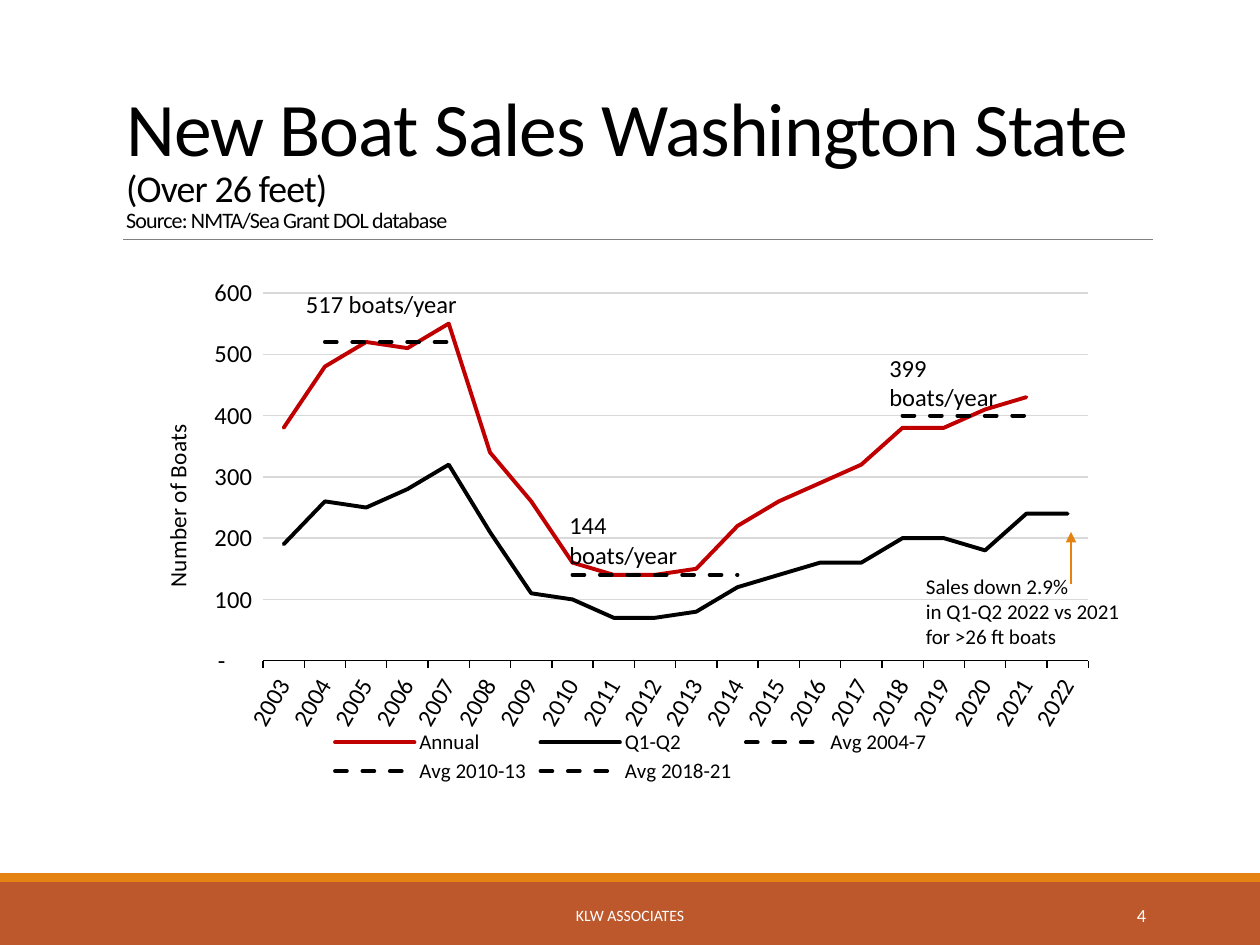
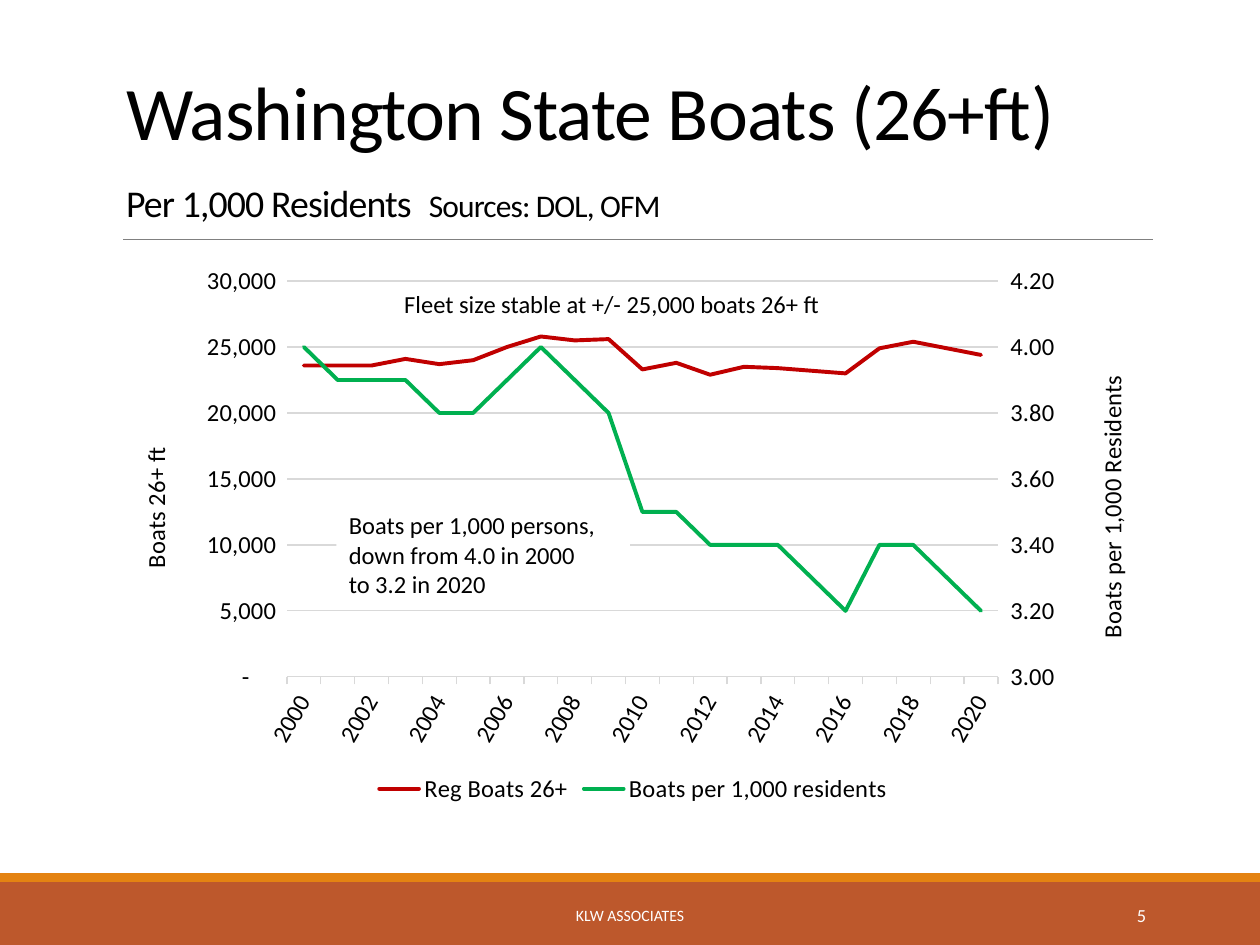
from copy import deepcopy

from lxml import etree
from pptx import Presentation
from pptx.chart.axis import ValueAxis
from pptx.chart.data import CategoryChartData
from pptx.dml.color import RGBColor
from pptx.enum.chart import XL_CHART_TYPE, XL_LEGEND_POSITION, XL_TICK_MARK
from pptx.enum.dml import MSO_LINE
from pptx.enum.shapes import MSO_CONNECTOR, MSO_SHAPE
from pptx.enum.text import MSO_ANCHOR, PP_ALIGN
from pptx.oxml.ns import qn
from pptx.util import Pt

BLACK = RGBColor(0x00, 0x00, 0x00)
WHITE = RGBColor(0xFF, 0xFF, 0xFF)
RUST = RGBColor(0xBD, 0x58, 0x2C)
ORANGE = RGBColor(0xE4, 0x83, 0x12)
GRAY = RGBColor(0x80, 0x80, 0x80)
GRID = RGBColor(0xD9, 0xD9, 0xD9)
RED = RGBColor(0xC0, 0x00, 0x00)
GREEN = RGBColor(0x00, 0xB0, 0x50)
FONT = "Calibri"
TOP, MIDDLE, BOTTOM = MSO_ANCHOR.TOP, MSO_ANCHOR.MIDDLE, MSO_ANCHOR.BOTTOM
LEFT, CENTER, RIGHT = PP_ALIGN.LEFT, PP_ALIGN.CENTER, PP_ALIGN.RIGHT
RECTANGLE, STRAIGHT = MSO_SHAPE.RECTANGLE, MSO_CONNECTOR.STRAIGHT
LINE_CHART, LEGEND_BOTTOM = XL_CHART_TYPE.LINE, XL_LEGEND_POSITION.BOTTOM
NO_TICK, TICK_OUT = XL_TICK_MARK.NONE, XL_TICK_MARK.OUTSIDE
DASH = MSO_LINE.DASH
COUNT_FORMAT = '_(* #,##0_);_(* \\(#,##0\\);_(* "-"??_);_('
BREAK = "\n"


def add_text(page, place, lines, color=BLACK, anchor=TOP, align=LEFT, fill=None):
    """Add a text box; each line is a list of (text, size) spans."""
    box = page.shapes.add_textbox(*map(Pt, place))
    if fill is not None:
        box.fill.solid()
        box.fill.fore_color.rgb = fill
    frame = box.text_frame
    frame.word_wrap = True
    frame.vertical_anchor = anchor
    for number, line in enumerate(lines):
        para = frame.add_paragraph() if number else frame.paragraphs[0]
        para.alignment = align
        for text, size in line:
            if text == BREAK:
                para.add_line_break()
                continue
            span = para.add_run()
            span.text = text
            for name, value in {"name": FONT, "size": Pt(size)}.items():
                setattr(span.font, name, value)
            span.font.color.rgb = color
    return box


def set_layout(parent, index, inner=False, **fractions):
    """Place a chart part by fractions of the chart's size."""
    for old in parent.findall(qn("c:layout")):
        parent.remove(old)
    layout = etree.Element(qn("c:layout"))
    manual = etree.SubElement(layout, qn("c:manualLayout"))
    if inner:
        etree.SubElement(manual, qn("c:layoutTarget")).set("val", "inner")
    for side in "xy":
        etree.SubElement(manual, qn(f"c:{side}Mode")).set("val", "edge")
    for side, value in fractions.items():
        etree.SubElement(manual, qn(f"c:{side}")).set("val", str(value))
    parent.insert(index, layout)


# Content of the two slides
GAP = [None]
sales = {
    "number": "4",
    "title": [("New Boat Sales Washington State ", 43.2), ("(Over 26 feet)", 21.6),
              (BREAK, 0), ("Source: NMTA/Sea Grant DOL database", 12.6)],
    "place": (89.7, 158.4, 541.44, 291.6),
    "plot": {"x": 0.112, "y": 0.031, "w": 0.871, "h": 0.721},
    "years": range(2003, 2023),
    "label_step": 1,
    "axis_line": BLACK,
    "axis_title_size": 13.3,
    "legend_size": 12,
    "legend_layout": {"x": 0.18, "y": 0.88, "w": 0.64, "h": 0.12},
    "series": [
        ("Annual", [380, 480, 520, 510, 550, 340, 260, 160, 140, 140, 150, 220, 260,
                    290, 320, 380, 380, 410, 430, None], RED, None),
        ("Q1-Q2", [190, 260, 250, 280, 320, 210, 110, 100, 70, 70, 80, 120, 140,
                   160, 160, 200, 200, 180, 240, 240], BLACK, None),
        ("Avg 2004-7", GAP + [520] * 4 + GAP * 15, BLACK, DASH),
        ("Avg 2010-13", GAP * 7 + [140] * 5 + GAP * 8, BLACK, DASH),
        ("Avg 2018-21", GAP * 15 + [400] * 4 + GAP, BLACK, DASH),
    ],
    # title, minimum, maximum, step, number format, tick, title x, title y
    "axes": [("Number of Boats", 0, 600, 100, COUNT_FORMAT, NO_TICK, 0, 0.28)],
    # place, lines, size, fill
    "notes": [
        ((167.76, 161.7, 105.12, 24.5), ["517 boats/year"], 14, None),
        ((318.24, 288, 98.64, 24.5), ["144 boats/year"], 14, None),
        ((501.12, 198, 98.64, 24.5), ["399 boats/year"], 14, None),
        ((522, 324, 131.04, 51), ["Sales down 2.9%", "in Q1-Q2 2022 vs 2021",
                                  "for >26 ft boats"], 12, None),
    ],
    "arrow": (612, 334, 612, 304),
}
fleet = {
    "number": "5",
    "title": [("Washington State Boats (26+ft) ", 43.2), (BREAK, 0),
              ("Per 1,000 Residents", 21.6), (" ", 43.2), ("Sources: DOL, OFM", 18)],
    "place": (64.8, 145.44, 594, 316.8),
    "plot": {"x": 0.167, "y": 0.048, "w": 0.684, "h": 0.714},
    "years": range(2000, 2021),
    "label_step": 2,
    "axis_line": GRID,
    "axis_title_size": 14,
    "legend_size": 14,
    "legend_layout": None,
    "series": [
        ("Reg Boats 26+", [23600, 23600, 23600, 24100, 23700, 24000, 25000, 25800, 25500,
                           25600, 23300, 23800, 22900, 23500, 23400, 23200, 23000, 24900,
                           25400, 24900, 24400], RED, None),
        ("Boats per 1,000 residents", [4, 3.9, 3.9, 3.9, 3.8, 3.8, 3.9, 4, 3.9, 3.8, 3.5,
                                       3.5, 3.4, 3.4, 3.4, 3.3, 3.2, 3.4, 3.4, 3.3, 3.2],
         GREEN, None),
    ],
    "axes": [("Boats 26+ ft", 0, 30000, 5000, COUNT_FORMAT, NO_TICK, 0.02, 0.34),
             ("Boats per 1,000 Residents", 3, 4.2, 0.2, "0.00", TICK_OUT, 0.94, 0.21)],
    "notes": [
        ((223.92, 161.7, 256.32, 24.5), ["Fleet size stable at +/- 25,000 boats 26+ ft"],
         14, WHITE),
        ((192.24, 288, 167.76, 58.3), ["Boats per 1,000 persons,", "down from 4.0 in 2000",
                                       "to 3.2 in 2020"], 14, WHITE),
    ],
    "arrow": None,
}

deck = Presentation()
deck.slide_width, deck.slide_height = Pt(720), Pt(540)

for content in (sales, fleet):
    page = deck.slides.add_slide(deck.slide_layouts[6])

    # Bottom bands
    for top, height, color in ((504, 36, RUST), (499, 5, ORANGE)):
        band = page.shapes.add_shape(RECTANGLE, 0, Pt(top), Pt(720), Pt(height))
        band.shadow.inherit = False
        band.fill.solid()
        band.fill.fore_color.rgb = color
        band.line.fill.background()

    # Title
    title = add_text(page, (65, 22.32, 594, 114.48), [content["title"]], anchor=BOTTOM)
    title.text_frame.paragraphs[0].line_spacing = 0.85
    for properties in title.element.iter(qn("a:rPr")):
        properties.set("spc", "-50")

    # Chart
    data = CategoryChartData()
    data.categories = [str(year) for year in content["years"]]
    for name, values, color, dash in content["series"]:
        data.add_series(name, values)
    chart = page.shapes.add_chart(LINE_CHART, *map(Pt, content["place"]), data).chart
    chart.has_title = False
    chart.font.name, chart.font.size = FONT, Pt(14)
    chart.font.color.rgb = BLACK
    for series, (name, values, color, dash) in zip(chart.plots[0].series, content["series"]):
        series.smooth = False
        series.format.line.width = Pt(2.25)
        series.format.line.color.rgb = color
        if dash:
            series.format.line.dash_style = dash
    plot_area = chart.element.find(".//" + qn("c:plotArea"))
    for outline in plot_area.iter(qn("a:ln")):
        outline.set("cap", "rnd")

    # Second value axis
    year_xml = plot_area.find(qn("c:catAx"))
    left_xml = plot_area.find(qn("c:valAx"))
    value_axes = [ValueAxis(left_xml)]
    if len(content["axes"]) > 1:
        left_lines = plot_area.find(qn("c:lineChart"))
        right_lines = deepcopy(left_lines)
        left_lines.remove(left_lines.findall(qn("c:ser"))[1])
        right_lines.remove(right_lines.findall(qn("c:ser"))[0])
        left_lines.addnext(right_lines)
        hidden_xml, right_xml = deepcopy(year_xml), deepcopy(left_xml)
        left_xml.addnext(hidden_xml)
        hidden_xml.addnext(right_xml)
        for axis_id, number in zip(right_lines.findall(qn("c:axId")), ("5001", "5002")):
            axis_id.set("val", number)
        for axis_xml, own, other in ((hidden_xml, "5001", "5002"), (right_xml, "5002", "5001")):
            axis_xml.find(qn("c:axId")).set("val", own)
            axis_xml.find(qn("c:crossAx")).set("val", other)
        hidden_xml.find(qn("c:delete")).set("val", "1")
        right_xml.find(qn("c:axPos")).set("val", "r")
        right_xml.find(qn("c:crosses")).set("val", "max")
        value_axes.append(ValueAxis(right_xml))

    # Value axes
    for axis, (name, low, high, step, number_format, tick, x, y) in zip(
            value_axes, content["axes"]):
        for key, value in {"minimum_scale": low, "maximum_scale": high, "major_unit": step,
                           "major_tick_mark": tick, "minor_tick_mark": NO_TICK,
                           "has_major_gridlines": axis is value_axes[0]}.items():
            setattr(axis, key, value)
        axis.format.line.fill.background()
        axis.tick_labels.number_format = number_format
        axis.tick_labels.number_format_is_linked = False
        axis.tick_labels.font.size = Pt(14)
        frame = axis.axis_title.text_frame
        frame.text = name
        font = frame.paragraphs[0].runs[0].font
        for key, value in {"name": FONT, "size": Pt(content["axis_title_size"]),
                           "bold": False}.items():
            setattr(font, key, value)
        font.color.rgb = BLACK
        title_xml = axis.axis_title.element
        title_xml.find(".//" + qn("a:bodyPr")).set("rot", "-5400000")
        set_layout(title_xml, 1, x=x, y=y)
    grid = value_axes[0].major_gridlines.format.line
    grid.color.rgb, grid.width = GRID, Pt(0.75)

    # Year axis
    year_axis = chart.category_axis
    year_axis.major_tick_mark = TICK_OUT
    year_axis.format.line.color.rgb = content["axis_line"]
    year_axis.format.line.width = Pt(0.75)
    year_axis.tick_labels.font.size = Pt(14)
    year_xml.find(qn("c:txPr")).find(qn("a:bodyPr")).set("rot", "-3600000")
    label_skip = etree.Element(qn("c:tickLblSkip"))
    label_skip.set("val", str(content["label_step"]))
    year_xml.find(qn("c:noMultiLvlLbl")).addprevious(label_skip)

    # Plot and legend places
    set_layout(plot_area, 0, inner=True, **content["plot"])
    chart.has_legend = True
    chart.legend.position = LEGEND_BOTTOM
    chart.legend.include_in_layout = False
    chart.legend.font.size = Pt(content["legend_size"])
    if content["legend_layout"]:
        set_layout(chart.element.find(".//" + qn("c:legend")), 1, **content["legend_layout"])

    # Footer
    add_text(page, (217.44, 508.6, 285.12, 28.8), [[("KLW ASSOCIATES", 9)]],
             WHITE, MIDDLE, CENTER)
    add_text(page, (584.3, 508.32, 77.76, 28.8), [[(content["number"], 10.5)]],
             WHITE, MIDDLE, RIGHT)

    # Notes on the chart
    for place, lines, size, fill in content["notes"]:
        add_text(page, place, [[(line, size)] for line in lines], fill=fill)

    # Title rule and arrow
    rules = [((70.56, 136.8, 658.8, 136.8), GRAY, 0.5, False)]
    if content["arrow"]:
        rules.append((content["arrow"], ORANGE, 1, True))
    for ends, color, width, has_head in rules:
        rule = page.shapes.add_connector(STRAIGHT, *map(Pt, ends))
        rule.line.color.rgb, rule.line.width = color, Pt(width)
        properties = rule.element.spPr
        etree.SubElement(properties, qn("a:effectLst"))
        if has_head:
            head = etree.SubElement(properties.find(qn("a:ln")), qn("a:tailEnd"))
            head.set("type", "triangle")

deck.save("out.pptx")
